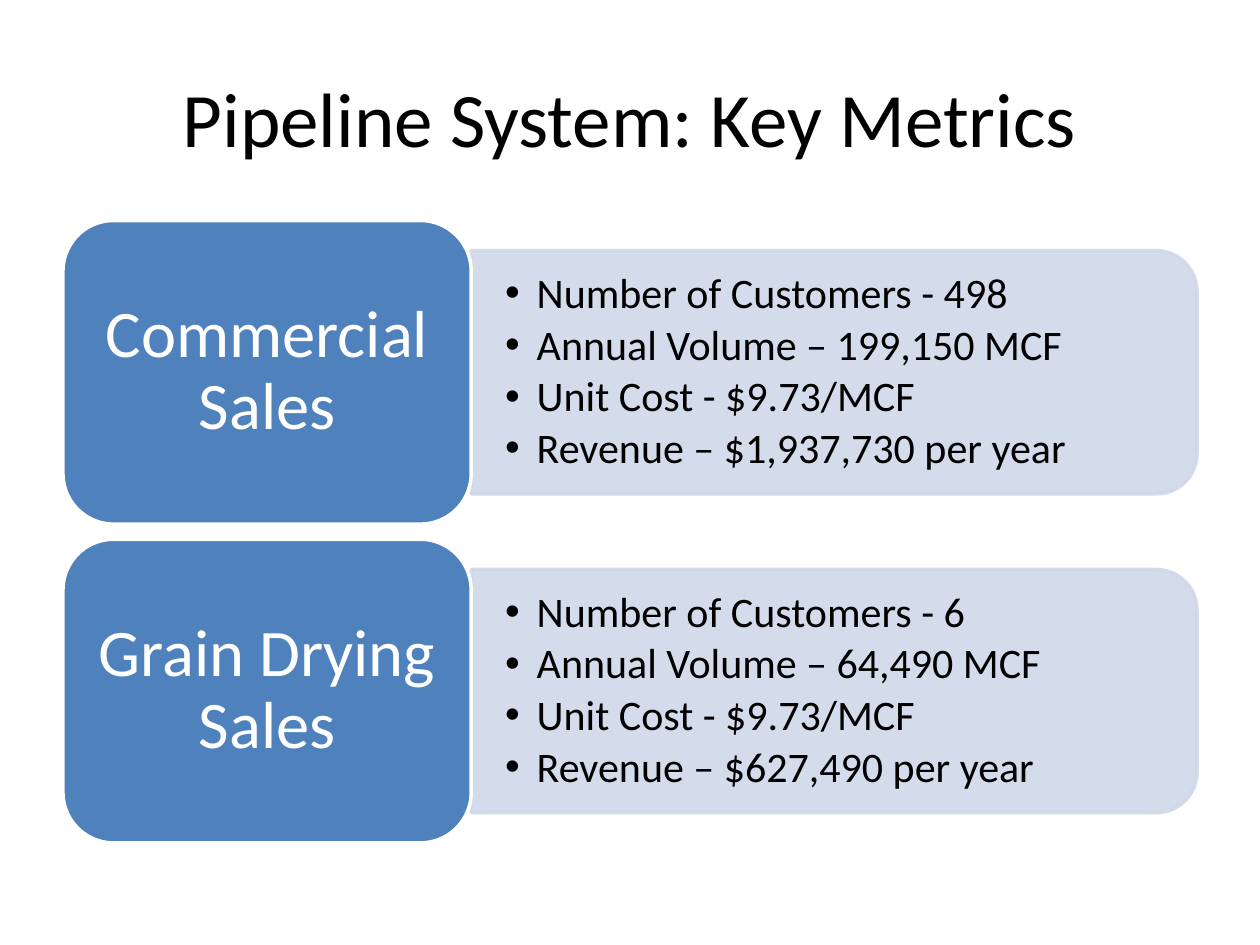
from lxml.etree import SubElement
from pptx import Presentation
from pptx.dml.color import RGBColor
from pptx.enum.shapes import MSO_SHAPE
from pptx.enum.text import MSO_ANCHOR, PP_ALIGN
from pptx.oxml.ns import qn
from pptx.util import Inches, Pt

FONT = "Calibri"
BLUE, PALE, WHITE, BLACK = "4F81BD", "D0D8E8", "FFFFFF", "000000"
LEFT, TOP = 0.5, 1.75
HEADING_WIDTH, PANEL_WIDTH = 3.24, 5.76
ROW_HEIGHT, PANEL_HEIGHT = 2.41, 1.93
ROW_PITCH = 2.53
LIST_WIDTH, LIST_HEIGHT = 5.67, 1.74

SALES = [
    ("Commercial Sales", [
        "Number of Customers - 498",
        "Annual Volume – 199,150 MCF",
        "Unit Cost - $9.73/MCF",
        "Revenue – $1,937,730 per year",
    ]),
    ("Grain Drying Sales", [
        "Number of Customers - 6",
        "Annual Volume – 64,490 MCF",
        "Unit Cost - $9.73/MCF",
        "Revenue – $627,490 per year",
    ]),
]


def color(value):
    return RGBColor.from_string(value)


def add_block(slide, preset, left, top, width, height, fill, line):
    shape = slide.shapes.add_shape(
        preset, Inches(left), Inches(top), Inches(width), Inches(height))
    shape.shadow.inherit = False
    shape.fill.solid()
    shape.fill.fore_color.rgb = color(fill)
    shape.line.color.rgb = color(line)
    shape.line.width = Pt(2)
    return shape


def set_frame(frame, side_margin, end_margin):
    frame.word_wrap = True
    frame.vertical_anchor = MSO_ANCHOR.MIDDLE
    frame.margin_left = frame.margin_right = Inches(side_margin)
    frame.margin_top = frame.margin_bottom = Inches(end_margin)


def format_paragraph(paragraph, size, text_color, alignment, space_after=0):
    paragraph.alignment = alignment
    paragraph.font.name = FONT
    paragraph.font.size = Pt(size)
    paragraph.font.color.rgb = color(text_color)
    if space_after:
        paragraph.line_spacing = 0.9
        paragraph.space_after = Pt(space_after)


def add_bullet(paragraph):
    properties = paragraph._p.get_or_add_pPr()
    properties.set("marL", str(Inches(0.25)))
    properties.set("indent", str(-Inches(0.25)))
    SubElement(properties, qn("a:buFont")).set("typeface", "Arial")
    SubElement(properties, qn("a:buChar")).set("char", "•")


def add_title(slide, text):
    title = slide.shapes.title
    title.left, title.top = Inches(LEFT), Inches(0.3)
    title.width, title.height = Inches(9), Inches(1.25)
    title.text_frame.text = text
    title.text_frame.vertical_anchor = MSO_ANCHOR.MIDDLE
    format_paragraph(title.text_frame.paragraphs[0], 44, BLACK, PP_ALIGN.CENTER)


def add_panel(slide, left, middle):
    """Add a panel with rounded right corners: a top-rounded shape, turned."""
    panel = add_block(
        slide, MSO_SHAPE.ROUND_2_SAME_RECTANGLE,
        left + (PANEL_WIDTH - PANEL_HEIGHT) / 2, middle - PANEL_WIDTH / 2,
        PANEL_HEIGHT, PANEL_WIDTH, PALE, PALE)
    panel.rotation = 90
    for fill_color in panel._element.spPr.iter(qn("a:srgbClr")):
        SubElement(fill_color, qn("a:alpha")).set("val", "90000")


def add_metrics(slide, left, middle, metrics):
    box = slide.shapes.add_textbox(
        Inches(left), Inches(middle - LIST_HEIGHT / 2),
        Inches(LIST_WIDTH), Inches(LIST_HEIGHT))
    frame = box.text_frame
    set_frame(frame, 0.27, 0.14)
    frame.text = "\n".join(metrics)
    for paragraph in frame.paragraphs:
        format_paragraph(paragraph, 24, BLACK, PP_ALIGN.LEFT, 3.6)
        paragraph.level = 1
        add_bullet(paragraph)


def add_heading(slide, top, text):
    heading = add_block(slide, MSO_SHAPE.ROUNDED_RECTANGLE, LEFT, top,
                        HEADING_WIDTH, ROW_HEIGHT, BLUE, WHITE)
    set_frame(heading.text_frame, 0.16, 0.08)
    heading.text_frame.text = text
    format_paragraph(heading.text_frame.paragraphs[0], 38, WHITE,
                     PP_ALIGN.CENTER, 13.3)


def main():
    presentation = Presentation()
    presentation.slide_width, presentation.slide_height = Inches(10), Inches(7.5)
    slide = presentation.slides.add_slide(presentation.slide_layouts[5])
    add_title(slide, "Pipeline System: Key Metrics")
    panel_left = LEFT + HEADING_WIDTH
    for row, (name, metrics) in enumerate(SALES):
        top = TOP + row * ROW_PITCH
        middle = top + ROW_HEIGHT / 2
        add_panel(slide, panel_left, middle)
        add_metrics(slide, panel_left, middle, metrics)
        add_heading(slide, top, name)
    presentation.save("out.pptx")


if __name__ == "__main__":
    main()
